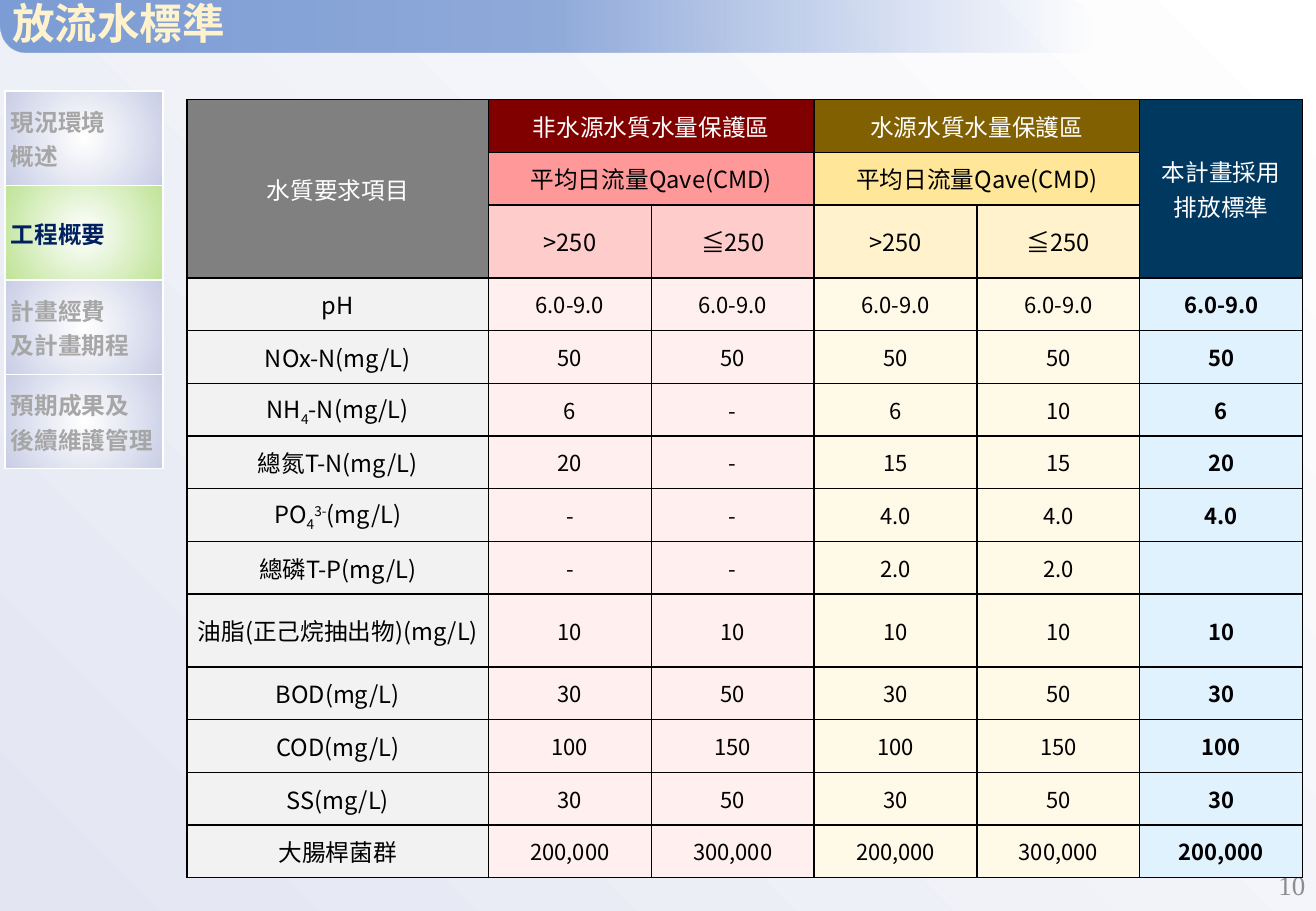
"""Build the effluent standards slide with its table and chapter navigation."""
import dataclasses
import typing

import lxml.etree
import pptx
import pptx.dml.color
import pptx.enum.shapes
import pptx.enum.text
import pptx.oxml.ns
import pptx.util

EMU_PER_PX = 9144
ALIGN = pptx.enum.text.PP_ALIGN
MIDDLE = pptx.enum.text.MSO_ANCHOR.MIDDLE
qn = pptx.oxml.ns.qn

@dataclasses.dataclass(frozen=True)
class Theme:
    font: str = "Noto Sans CJK SC"
    number_font: str = "Times New Roman"
    title_size: float = 25.2
    number_size: float = 16
    label_size: float = 14
    value_size: float = 13
    black: str = "000000"
    white: str = "FFFFFF"
    cream: str = "FFF2CC"
    number: str = "8C8C8C"
    muted: str = "A6A6A6"
    active: str = "002060"
    page_end: str = "E3E6F2"
    chapter_end: str = "C8CDE5"
    active_end: str = "BEE396"
    bar: tuple[str, ...] = ("9DB5E3", "90AADA", "7C9DD5")
    item_head: str = "808080"
    adopted_head: str = "003860"
    item: str = "F2F2F2"
    adopted: str = "E1F2FF"
    zones: tuple[tuple[str, ...], ...] = (
        ("800000", "FF9999", "FFCCCC", "FFEFEF"), ("806000", "FFE699", "FFF2CC", "FFF9E7"))

THEME = Theme()

class Box(typing.NamedTuple):
    left: int
    top: int
    width: int
    height: int

class Span(typing.NamedTuple):
    text: str
    baseline: int = 0

Lines = tuple[tuple[Span, ...], ...]

@dataclasses.dataclass(frozen=True)
class Style:
    color: str
    size: float
    bold: bool = False
    font: str = THEME.font

@dataclasses.dataclass(frozen=True)
class Cell:
    row: int
    column: int
    lines: Lines
    fill: str
    style: Style
    rows: int = 1
    columns: int = 1

class Standard(typing.NamedTuple):
    item: tuple[Span, ...]
    values: tuple[str, ...]

class Chapter(typing.NamedTuple):
    lines: tuple[str, ...]
    active: bool = False

ZONE_NAMES = ("非水源水質水量保護區", "水源水質水量保護區")
STANDARDS = (
    Standard((Span("pH"),), ("6.0-9.0",) * 5),
    Standard((Span("NOx-N(mg/L)"),), ("50",) * 5),
    Standard((Span("NH"), Span("4", -25), Span("-N(mg/L)")), ("6", "-", "6", "10", "6")),
    Standard((Span("總氮T-N(mg/L)"),), ("20", "-", "15", "15", "20")),
    Standard((Span("PO"), Span("4", -25), Span("3-", 30), Span("(mg/L)")), ("-", "-", "4.0", "4.0", "4.0")),
    Standard((Span("總磷T-P(mg/L)"),), ("-", "-", "2.0", "2.0", "")),
    Standard((Span("油脂(正己烷抽出物)(mg/L)"),), ("10",) * 5),
    Standard((Span("BOD(mg/L)"),), ("30", "50", "30", "50", "30")),
    Standard((Span("COD(mg/L)"),), ("100", "150", "100", "150", "100")),
    Standard((Span("SS(mg/L)"),), ("30", "50", "30", "50", "30")),
    Standard((Span("大腸桿菌群"),), ("200,000", "300,000", "200,000", "300,000", "200,000")),
)
TALL_ROWS = {2: 60, 9: 60}
CHAPTERS = (Chapter(("現況環境", "概述")), Chapter(("工程概要",), True),
            Chapter(("計畫經費", "及計畫期程")), Chapter(("預期成果及", "後續維護管理")))

def place(box: Box) -> tuple[int, ...]:
    return tuple(length * EMU_PER_PX for length in box)

def plain(*texts: str) -> Lines:
    return tuple((Span(text),) for text in texts)

def add_lines(frame, lines: Lines, style: Style, align) -> None:
    for index, line in enumerate(lines):
        para = frame.add_paragraph() if index else frame.paragraphs[0]
        para.alignment = align
        for span in filter(lambda span: span.text, line):
            run = para.add_run()
            run.text, run.font.name, run.font.bold = span.text, style.font, style.bold
            run.font.size = pptx.util.Pt(style.size)
            run.font.color.rgb = pptx.dml.color.RGBColor.from_string(style.color)
            properties = run._r.get_or_add_rPr()
            lxml.etree.SubElement(properties, qn("a:ea"), typeface=style.font)
            if span.baseline:
                properties.set("baseline", str(span.baseline * 1000))

def set_gradient(owner, colors: tuple[str, ...], angle: int | None = None, fade: bool = False) -> None:
    solid = next(owner.iter(qn("a:solidFill")))
    gradient = lxml.etree.Element(qn("a:gradFill"), rotWithShape="1")
    stops = lxml.etree.SubElement(gradient, qn("a:gsLst"))
    for index, value in enumerate(colors):
        stop = lxml.etree.SubElement(stops, qn("a:gs"), pos=str(100000 * index // (len(colors) - 1)))
        color = lxml.etree.SubElement(stop, qn("a:srgbClr"), val=value)
        if fade and index == 0:
            lxml.etree.SubElement(color, qn("a:alpha"), val="0")
    if angle is None:
        circle = lxml.etree.SubElement(gradient, qn("a:path"), path="circle")
        lxml.etree.SubElement(circle, qn("a:fillToRect"), dict.fromkeys("ltrb", "50000"))
    else:
        lxml.etree.SubElement(gradient, qn("a:lin"), ang=str(angle * 60000), scaled="0")
    solid.getparent().replace(solid, gradient)

def add_grid(page, box: Box, widths: list[int], tall: dict[int, int], cells: list[Cell],
             border: str, margin: int, align):
    count = max(cell.row + cell.rows for cell in cells)
    holder = page.shapes.add_table(count, len(widths), *place(box))
    table = holder.table
    table.first_row = table.horz_banding = False
    for column, width in zip(table.columns, widths):
        column.width = width * EMU_PER_PX
    regular = (box.height - sum(tall.values())) / (count - len(tall))
    for index, row in enumerate(table.rows):
        row.height = int(tall.get(index, regular) * EMU_PER_PX)
    for cell in cells:
        origin = table.cell(cell.row, cell.column)
        if cell.rows * cell.columns > 1:
            origin.merge(table.cell(cell.row + cell.rows - 1, cell.column + cell.columns - 1))
        for row in range(cell.row, cell.row + cell.rows):
            for column in range(cell.column, cell.column + cell.columns):
                fill = table.cell(row, column).fill
                fill.solid()
                fill.fore_color.rgb = pptx.dml.color.RGBColor.from_string(cell.fill)
        origin.vertical_anchor = MIDDLE
        origin.margin_left = origin.margin_right = margin * EMU_PER_PX
        origin.margin_top = origin.margin_bottom = margin * EMU_PER_PX
        add_lines(origin.text_frame, cell.lines, cell.style, align)
    for properties in holder.element.iter(qn("a:tcPr")):
        for index, side in enumerate("LRTB"):
            line = lxml.etree.Element(qn(f"a:ln{side}"), w=str(pptx.util.Pt(1)))
            paint = lxml.etree.SubElement(line, qn("a:solidFill"))
            lxml.etree.SubElement(paint, qn("a:srgbClr"), val=border)
            properties.insert(index, line)
    return holder

def standard_cells() -> list[Cell]:
    light, dark = (Style(color, THEME.label_size) for color in (THEME.white, THEME.black))
    value = Style(THEME.black, THEME.value_size)
    adopted = dataclasses.replace(value, bold=True)
    cells = [Cell(0, 0, plain("水質要求項目"), THEME.item_head, light, rows=3),
             Cell(0, 5, plain("本計畫採用", "排放標準"), THEME.adopted_head, light, rows=3)]
    for column, name, (head, flow, limit, _) in zip((1, 3), ZONE_NAMES, THEME.zones):
        cells.append(Cell(0, column, plain(name), head, light, columns=2))
        cells.append(Cell(1, column, plain("平均日流量Qave(CMD)"), flow, dark, columns=2))
        cells += [Cell(2, column + step, plain(text), limit, dark) for step, text in enumerate((">250", "≦250"))]
    fills = [zone[-1] for zone in THEME.zones for _ in range(2)] + [THEME.adopted]
    for row, standard in enumerate(STANDARDS, 3):
        cells.append(Cell(row, 0, (standard.item,), THEME.item, dark))
        for column, (text, fill) in enumerate(zip(standard.values, fills), 1):
            cells.append(Cell(row, column, plain(text), fill, adopted if column == 5 else value))
    return cells

def add_header(page) -> None:
    bar = page.shapes.add_shape(pptx.enum.shapes.MSO_SHAPE.ROUND_2_DIAG_RECTANGLE, *place(Box(0, 0, 898, 43)))
    bar.adjustments[0], bar.adjustments[1] = 0, 0.5
    bar.shadow.inherit = False
    bar.line.fill.background()
    bar.fill.solid()
    set_gradient(bar.element.spPr, THEME.bar, 180, fade=True)
    title = page.shapes.title
    title.element.addprevious(bar.element)
    title.left, title.top, title.width, title.height = place(Box(0, 0, 934, 43))
    title.text_frame.auto_size = pptx.enum.text.MSO_AUTO_SIZE.NONE
    title.text_frame.vertical_anchor = MIDDLE
    add_lines(title.text_frame, plain("放流水標準"), Style(THEME.cream, THEME.title_size, True), ALIGN.LEFT)
    title.text_frame.paragraphs[0].line_spacing = 0.9

def add_page_number(page) -> None:
    frame = page.shapes.add_textbox(*place(Box(840, 708, 244, 40))).text_frame
    frame.word_wrap, frame.vertical_anchor = True, MIDDLE
    add_lines(frame, plain("10"), Style(THEME.number, THEME.number_size, font=THEME.number_font), ALIGN.RIGHT)

def add_chapters(page) -> None:
    cells = [Cell(row, 0, plain(*chapter.lines), THEME.white,
                  Style(THEME.active if chapter.active else THEME.muted, THEME.label_size, True))
             for row, chapter in enumerate(CHAPTERS)]
    holder = add_grid(page, Box(4, 75, 130, 311), [130], {}, cells, THEME.white, 5, ALIGN.JUSTIFY)
    for chapter, properties in zip(CHAPTERS, holder.element.iter(qn("a:tcPr"))):
        end = THEME.active_end if chapter.active else THEME.chapter_end
        set_gradient(properties.find(qn("a:solidFill")), (THEME.white, end))

def main() -> None:
    deck = pptx.Presentation()
    deck.slide_width, deck.slide_height = 1083 * EMU_PER_PX, 750 * EMU_PER_PX
    page = deck.slides.add_slide(deck.slide_layouts[5])
    page.background.fill.solid()
    set_gradient(page.element, (THEME.white, THEME.page_end), 135)
    add_header(page)
    add_page_number(page)
    add_grid(page, Box(154, 82, 917, 641), [248] + [134] * 5, TALL_ROWS, standard_cells(),
             THEME.black, 2, ALIGN.CENTER)
    add_chapters(page)
    deck.save("out.pptx")

if __name__ == "__main__":
    main()
